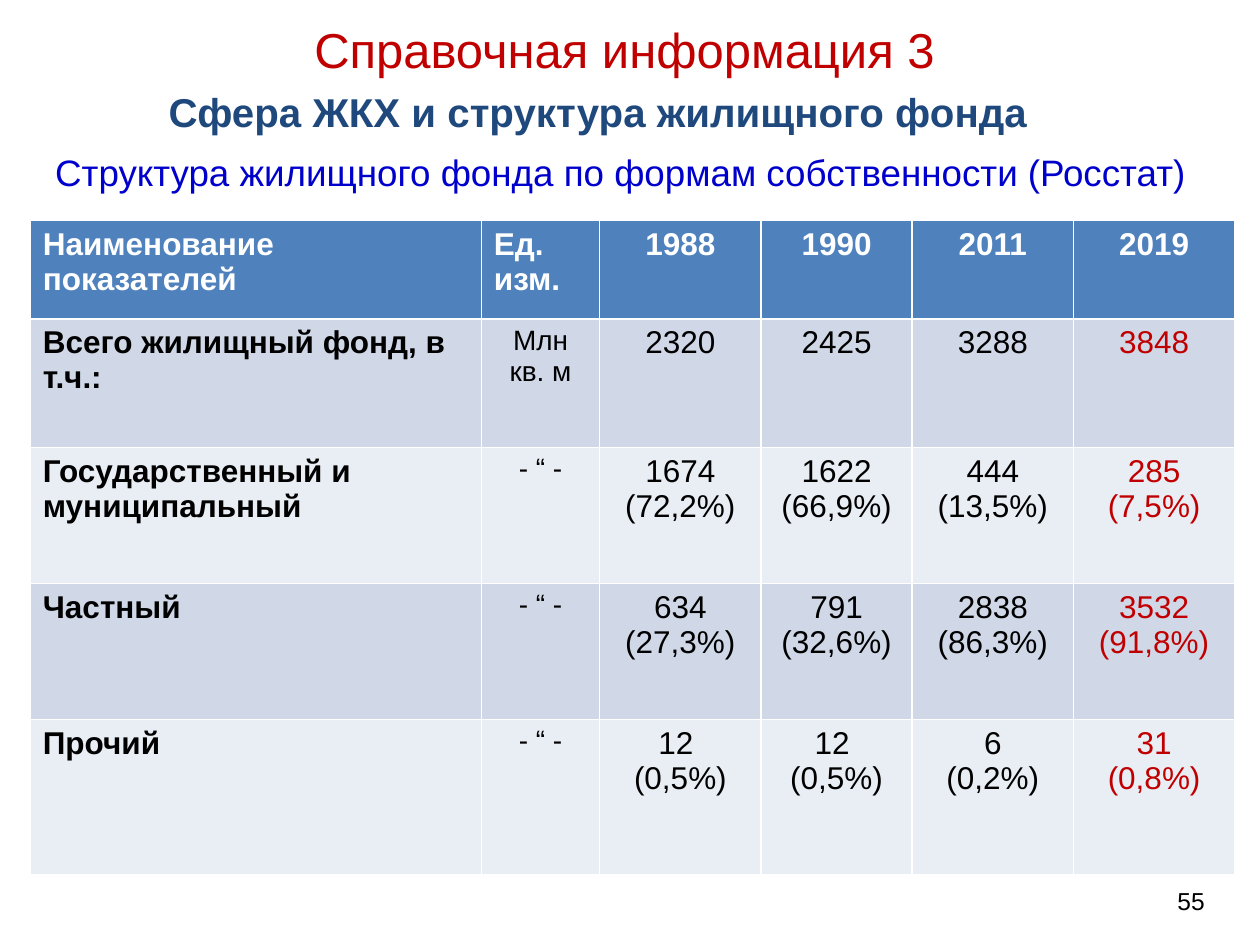
from pptx import Presentation
from pptx.dml.color import RGBColor
from pptx.enum.text import MSO_ANCHOR as Anchor, MSO_AUTO_SIZE as Fit, PP_ALIGN as Align
from pptx.util import Inches, Pt

RED = RGBColor(0xC0, 0x00, 0x00)
BLUE = RGBColor(0x00, 0x00, 0xCC)
NAVY = RGBColor(0x1F, 0x49, 0x7D)
BLACK = RGBColor(0x00, 0x00, 0x00)
WHITE = RGBColor(0xFF, 0xFF, 0xFF)
HEAD = RGBColor(0x4F, 0x81, 0xBD)
BANDS = [RGBColor(0xD0, 0xD8, 0xE8), RGBColor(0xE9, 0xED, 0xF4)]


def write(frame, text, size=18, color=BLACK, bold=False, align=Align.CENTER,
          anchor=Anchor.TOP):
    frame.text = text
    frame.word_wrap = True
    frame.vertical_anchor = anchor
    for para in frame.paragraphs:
        para.alignment = align
        for run in para.runs:
            font = run.font
            font.name = "Arial"
            font.size = Pt(size)
            font.bold = bold
            font.color.rgb = color


prs = Presentation()
prs.slide_width = Inches(10)
prs.slide_height = Inches(7.5)
slide = prs.slides.add_slide(prs.slide_layouts[5])

# Headings and page number
title = slide.shapes.title
title.left, title.top = Inches(0.22), Inches(0.16)
title.width, title.height = Inches(9.47), Inches(0.45)
write(title.text_frame, "Справочная информация 3", size=28, color=RED,
      anchor=Anchor.MIDDLE)
title.text_frame.auto_size = Fit.NONE

labels = [
    ((0.33, 0.64, 8.84, 0.49), "Сфера ЖКХ и структура жилищного фонда",
     dict(size=23, color=NAVY, bold=True)),
    ((0.19, 1.16, 9.47, 0.41),
     "Структура жилищного фонда по формам собственности (Росстат)",
     dict(size=21, color=BLUE, anchor=Anchor.MIDDLE)),
    ((7.33, 6.95, 2.33, 0.4), "55",
     dict(size=14, align=Align.RIGHT, anchor=Anchor.MIDDLE)),
]
for place, text, style in labels:
    box = slide.shapes.add_textbox(*[Inches(n) for n in place])
    write(box.text_frame, text, **style)

# Housing stock table: \n starts a paragraph, \v breaks a line
rows = [
    ["Наименование показателей", "Ед. изм.", "1988", "1990", "2011", "2019"],
    ["Всего жилищный фонд, в т.ч.:", "Млн кв. м", "2320", "2425", "3288", "3848"],
    ["Государственный и муниципальный", "- “ -", "1674 (72,2%)",
     "1622 (66,9%)", "444 (13,5%)", "285\n(7,5%)"],
    ["Частный", "- “ -", "634 (27,3%)", "791 (32,6%)", "2838 (86,3%)",
     "3532\n(91,8%)"],
    ["Прочий", "- “ -", "12 \v(0,5%)", "12 \n(0,5%)", "6\v(0,2%)", "31\n(0,8%)"],
]
widths = [3.58, 0.94, 1.28, 1.2, 1.28, 1.28]
heights = [0.78, 1.02, 1.08, 1.08, 1.23]

table = slide.shapes.add_table(
    len(rows), len(widths), Inches(0.24), Inches(1.75),
    Inches(sum(widths)), Inches(sum(heights))).table
for col, width in zip(table.columns, widths):
    col.width = Inches(width)
for row, height in zip(table.rows, heights):
    row.height = Inches(height)

last = len(widths) - 1
for r, row in enumerate(rows):
    for c, text in enumerate(row):
        cell = table.cell(r, c)
        cell.fill.solid()
        if r == 0:
            cell.fill.fore_color.rgb = HEAD
            write(cell.text_frame, text, color=WHITE, bold=True,
                  align=Align.LEFT if c < 2 else Align.CENTER)
        else:
            cell.fill.fore_color.rgb = BANDS[(r - 1) % 2]
            write(cell.text_frame, text, size=16 if c == 1 else 18,
                  color=RED if c == last else BLACK, bold=c == 0,
                  align=Align.LEFT if c == 0 else Align.CENTER)

prs.save("out.pptx")
